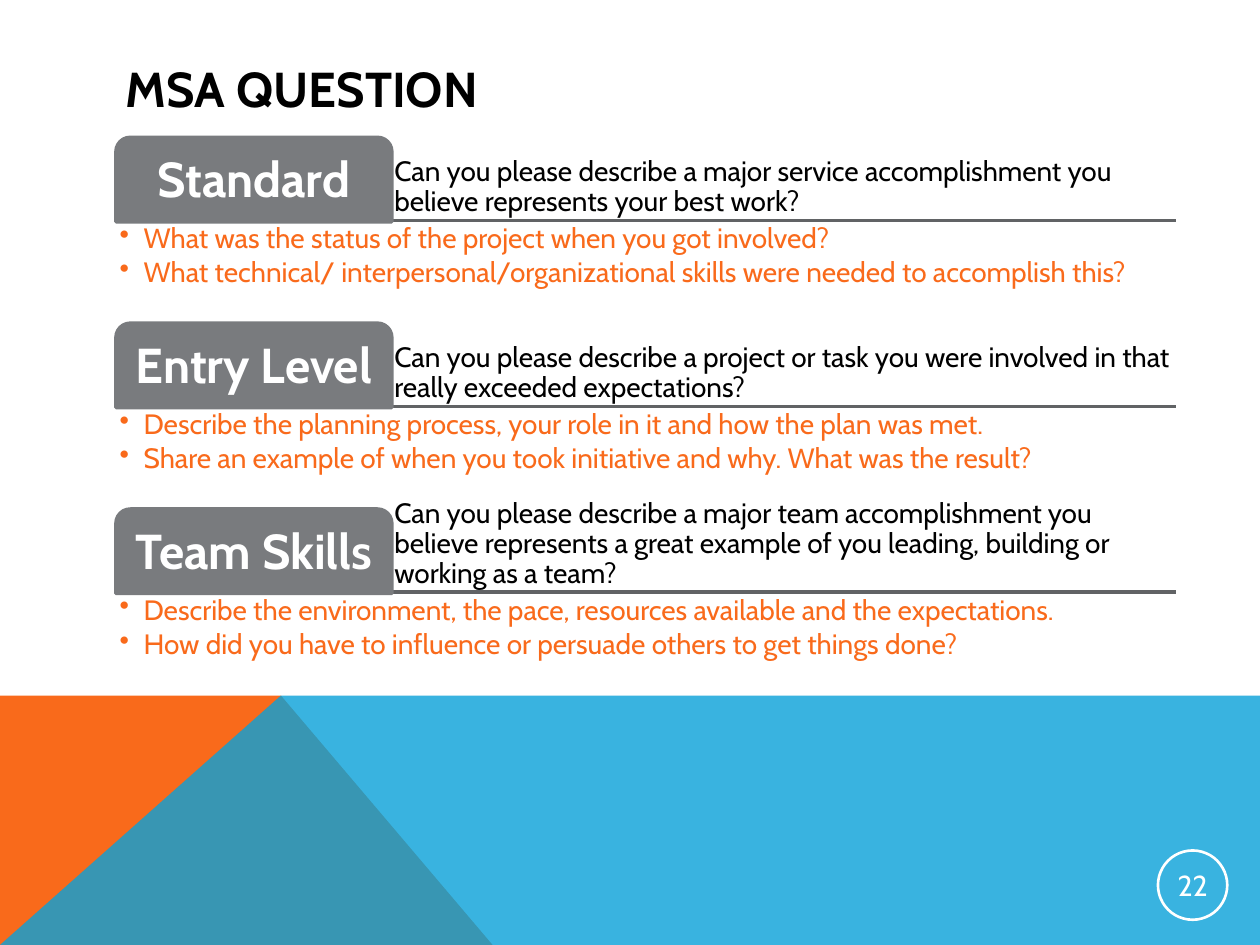
from lxml.etree import SubElement
from pptx import Presentation
from pptx.dml.color import RGBColor
from pptx.enum.shapes import MSO_CONNECTOR, MSO_SHAPE
from pptx.enum.text import MSO_ANCHOR, PP_ALIGN
from pptx.oxml.ns import qn
from pptx.util import Inches, Pt


def rgb(color):
    return RGBColor.from_string(color)


def write(s, *lines, size=16, color="000000", bold=False, align=PP_ALIGN.LEFT,
          anchor=MSO_ANCHOR.MIDDLE, inset=0.03, spacing=0.9, after=0, bullet=False):
    tf = s.text_frame
    tf.word_wrap = True
    tf.vertical_anchor = anchor
    tf.margin_left = tf.margin_right = Inches(inset)
    tf.margin_top = tf.margin_bottom = Inches(inset)
    for i, line in enumerate(lines):
        p = tf.add_paragraph() if i else tf.paragraphs[0]
        p.alignment = align
        p.line_spacing = spacing
        p.space_after = Pt(after)
        r = p.add_run()
        r.text = line
        r.font.name = "Cabin"
        r.font.size = Pt(size)
        r.font.bold = bold
        r.font.color.rgb = rgb(color)
        if bullet:
            pPr = p._p.get_or_add_pPr()
            pPr.set("marL", str(Inches(0.19)))
            pPr.set("indent", str(-Inches(0.19)))
            SubElement(pPr, qn("a:buChar")).set("char", "•")


prs = Presentation()
prs.slide_width = Inches(10)
prs.slide_height = Inches(7.5)
slide = prs.slides.add_slide(prs.slide_layouts[6])
shapes = slide.shapes

# Coloured footer: orange triangle under a translucent blue band
footer = [
    ([(0, 7.5), (0, 5.52), (2.23, 5.52), (3.91, 7.5)], "F96A1B", 100),
    ([(0, 7.5), (2.23, 5.52), (10, 5.52), (10, 7.5)], "08A1D9", 80),
]
for points, color, opacity in footer:
    corners = [(Inches(x), Inches(y)) for x, y in points]
    builder = shapes.build_freeform(*corners[0])
    builder.add_line_segments(corners[1:], close=True)
    s = builder.convert_to_shape()
    s.shadow.inherit = False
    s.fill.solid()
    s.fill.fore_color.rgb = rgb(color)
    s.line.fill.background()
    if opacity < 100:
        clr = s._element.spPr.find(qn("a:solidFill")).find(qn("a:srgbClr"))
        SubElement(clr, qn("a:alpha")).set("val", str(opacity * 1000))

# Title
s = shapes.add_textbox(Inches(0.9), Inches(0.4), Inches(8.22), Inches(0.6))
write(s, "MSA QUESTION", size=28, bold=True, inset=0.1, spacing=1.0)

# Slide number in a ring
s = shapes.add_shape(MSO_SHAPE.OVAL, Inches(9.19), Inches(6.75), Inches(0.55), Inches(0.55))
s.shadow.inherit = False
s.fill.background()
s.line.color.rgb = rgb("FFFFFF")
s.line.width = Pt(1.5)
write(s, "22", size=16.5, color="FFFFFF", align=PP_ALIGN.CENTER, inset=0.01, spacing=1.0)

# Question sections: tab, question, rule and follow-up bullets
sections = [
    ("Standard",
     "Can you please describe a major service accomplishment you believe "
     "represents your best work?",
     ["What was the status of the project when you got involved?",
      "What technical/ interpersonal/organizational skills were needed to accomplish this?"]),
    ("Entry Level",
     "Can you please describe a project or task you were involved in that "
     "really exceeded expectations?",
     ["Describe the planning process, your role in it and how the plan was met.",
      "Share an example of when you took initiative and why. What was the result?"]),
    ("Team Skills",
     "Can you please describe a major team accomplishment you believe "
     "represents a great example of you leading, building or working as a team?",
     ["Describe the environment, the pace, resources available and the expectations.",
      "How did you have to influence or persuade others to get things done?"]),
]
left, right, tab_w, tab_h = 0.92, 9.33, 2.19, 0.67
first_rule, pitch = 1.75, 1.475
for i, (name, question, follow_ups) in enumerate(sections):
    rule_y = first_rule + i * pitch
    top = Inches(rule_y - tab_h + 0.01)

    rule = shapes.add_connector(MSO_CONNECTOR.STRAIGHT, Inches(left), Inches(rule_y),
                                Inches(right), Inches(rule_y))
    rule.line.color.rgb = rgb("616365")
    rule.line.width = Pt(2)
    SubElement(rule._element.spPr, qn("a:effectLst"))

    s = shapes.add_textbox(Inches(3.1), top, Inches(6.23), Inches(tab_h))
    write(s, question, anchor=MSO_ANCHOR.BOTTOM)

    s = shapes.add_shape(MSO_SHAPE.ROUND_2_SAME_RECTANGLE, Inches(left), top,
                         Inches(tab_w), Inches(tab_h))
    s.adjustments[0] = 0.17
    s.shadow.inherit = False
    s.fill.solid()
    s.fill.fore_color.rgb = rgb("797B7E")
    s.line.color.rgb = rgb("797B7E")
    s.line.width = Pt(2)
    write(s, name, size=28, color="FFFFFF", bold=True, align=PP_ALIGN.CENTER, inset=0.06)

    s = shapes.add_textbox(Inches(left), Inches(rule_y), Inches(8.42), Inches(0.77))
    write(s, *follow_ups, color="F96A1B", anchor=MSO_ANCHOR.TOP, after=2.4, bullet=True)

prs.save("out.pptx")
